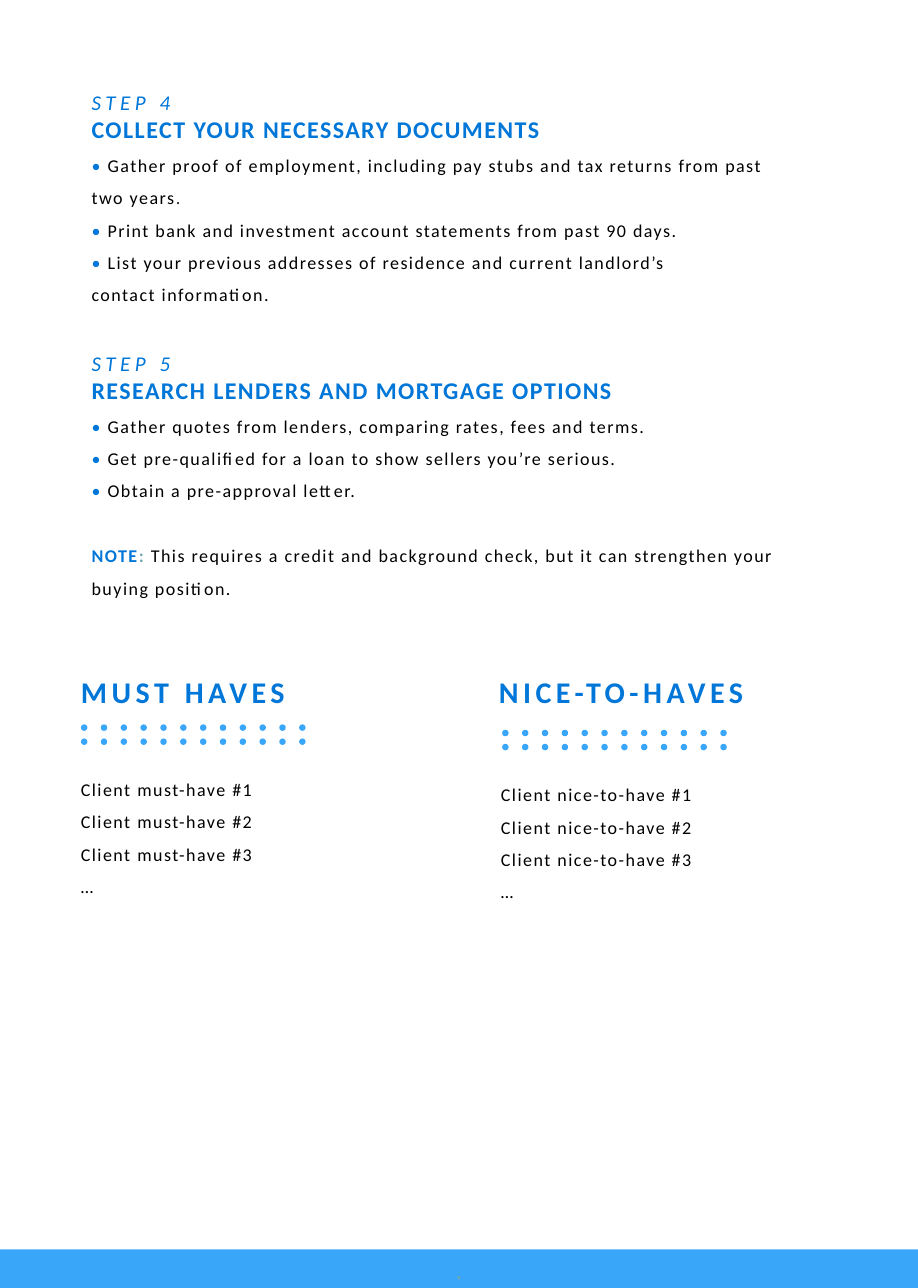
from pptx import Presentation
from pptx.dml.color import RGBColor
from pptx.enum.shapes import MSO_SHAPE
from pptx.enum.text import MSO_ANCHOR, PP_ALIGN
from pptx.util import Inches, Pt

BLUE, SKY, BLACK, INK, SAGE = "0077D8", "39A6FA", "000000", "21202E", "70A8AF"


def add_run(paragraph, text, size, color, spacing=1, bold=False, italic=False, face="Calibri"):
    """Append one run; spacing is the letter spacing in points."""
    run = paragraph.add_run()
    run.text = text
    font = run.font
    font.name, font.size, font.bold, font.italic = face, Pt(size), bold, italic
    font.color.rgb = RGBColor.from_string(color)
    run._r.get_or_add_rPr().set("spc", str(spacing * 100))


def add_text_frame(left, top, width, height):
    frame = slide.shapes.add_textbox(*map(Inches, (left, top, width, height))).text_frame
    frame.word_wrap = True
    return frame


prs = Presentation()
prs.slide_width, prs.slide_height = Inches(8.5), Inches(11.93)
slide = prs.slides.add_slide(prs.slide_layouts[6])

# Steps: each bullet is a list of lines, each line a list of (text, colour)
steps = [
    ("STEP 4", "COLLECT YOUR NECESSARY DOCUMENTS", [
        [[("Gather proof of employment, including pay stubs and tax returns from past", BLACK)],
         [("two years", BLACK), (".", INK)]],
        [[("Print bank and investment account statements from past 90 days.", BLACK)]],
        [[("List your previous addresses of residence and current landlord’s", BLACK)],
         [("contact information.", BLACK)]],
    ]),
    ("STEP 5", "RESEARCH LENDERS AND MORTGAGE OPTIONS", [
        [[("Gather quotes from lenders, comparing rates, fees and terms.", BLACK)]],
        [[("Get pre-qualified for a loan to show sellers you’re serious.", BLACK)]],
        [[("Obtain a pre-approval letter.", BLACK)]],
    ]),
]
section_gap = Pt(21.6)
steps_frame = add_text_frame(0.75, 0.78, 7, 5.14)
for index, (step, heading, bullets) in enumerate(steps):
    label = steps_frame.add_paragraph() if index else steps_frame.paragraphs[0]
    if index:
        label.space_before, label.line_spacing = section_gap, 1.5
    add_run(label, step, 14, BLUE, spacing=3, italic=True)
    add_run(steps_frame.add_paragraph(), heading, 16, BLUE, bold=True)
    for lines in bullets:
        bullet = steps_frame.add_paragraph()
        bullet.line_spacing = 1.5
        add_run(bullet, "• ", 12, BLUE)
        for number, line in enumerate(lines):
            if number:
                bullet.add_line_break()
            for text, color in line:
                add_run(bullet, text, 12, color)

note = steps_frame.add_paragraph()
note.space_before, note.line_spacing = section_gap, 1.5
add_run(note, "NOTE", 12, BLUE, bold=True)
add_run(note, ": ", 12, SAGE, bold=True)
add_run(note, "This requires a credit and background check, but it can strengthen your buying position.",
        12, BLACK)

# Wish lists: title, item name, title left, list left, dots left, dots top
wish_lists = [
    ("MUST HAVES", "must-have", 0.65, 0.65, 0.75, 6.71),
    ("NICE-TO-HAVES", "nice-to-have", 4.52, 4.54, 4.65, 6.76),
]
dot_columns, dot_rows, dot_size = 12, 2, 0.06
column_pitch, row_pitch = 2.02 / (dot_columns - 1), 0.13
for title, item, title_left, list_left, dots_left, dots_top in wish_lists:
    title_frame = add_text_frame(title_left, 6.19, 3.12, 0.44)
    add_run(title_frame.paragraphs[0], title, 20, BLUE, spacing=3, bold=True)

    dots = slide.shapes.add_group_shape()
    for row in range(dot_rows):
        for column in range(dot_columns):
            dot = dots.shapes.add_shape(
                MSO_SHAPE.OVAL, Inches(dots_left + column * column_pitch),
                Inches(dots_top + row * row_pitch), Inches(dot_size), Inches(dot_size))
            dot.shadow.inherit = False
            dot.fill.solid()
            dot.fill.fore_color.rgb = RGBColor.from_string(SKY)
            dot.line.fill.background()

    list_frame = add_text_frame(list_left, dots_top + 0.35, 3.22, 1.28)
    entries = [f"Client {item} #{number}" for number in (1, 2, 3)] + ["…"]
    for index, entry in enumerate(entries):
        paragraph = list_frame.add_paragraph() if index else list_frame.paragraphs[0]
        paragraph.line_spacing = 1.5
        add_run(paragraph, entry, 12, BLACK)

# Footer band
footer_height = int(prs.slide_height * 0.03)
footer = slide.shapes.add_shape(MSO_SHAPE.RECTANGLE, 0, prs.slide_height - footer_height,
                                prs.slide_width, footer_height)
footer.shadow.inherit = False
footer.fill.solid()
footer.fill.fore_color.rgb = RGBColor.from_string(SKY)
footer.line.fill.background()
footer.text_frame.vertical_anchor = MSO_ANCHOR.MIDDLE
footer_text = footer.text_frame.paragraphs[0]
footer_text.alignment = PP_ALIGN.CENTER
add_run(footer_text, ".", 18, SAGE, face="Montserrat")

prs.save("out.pptx")
